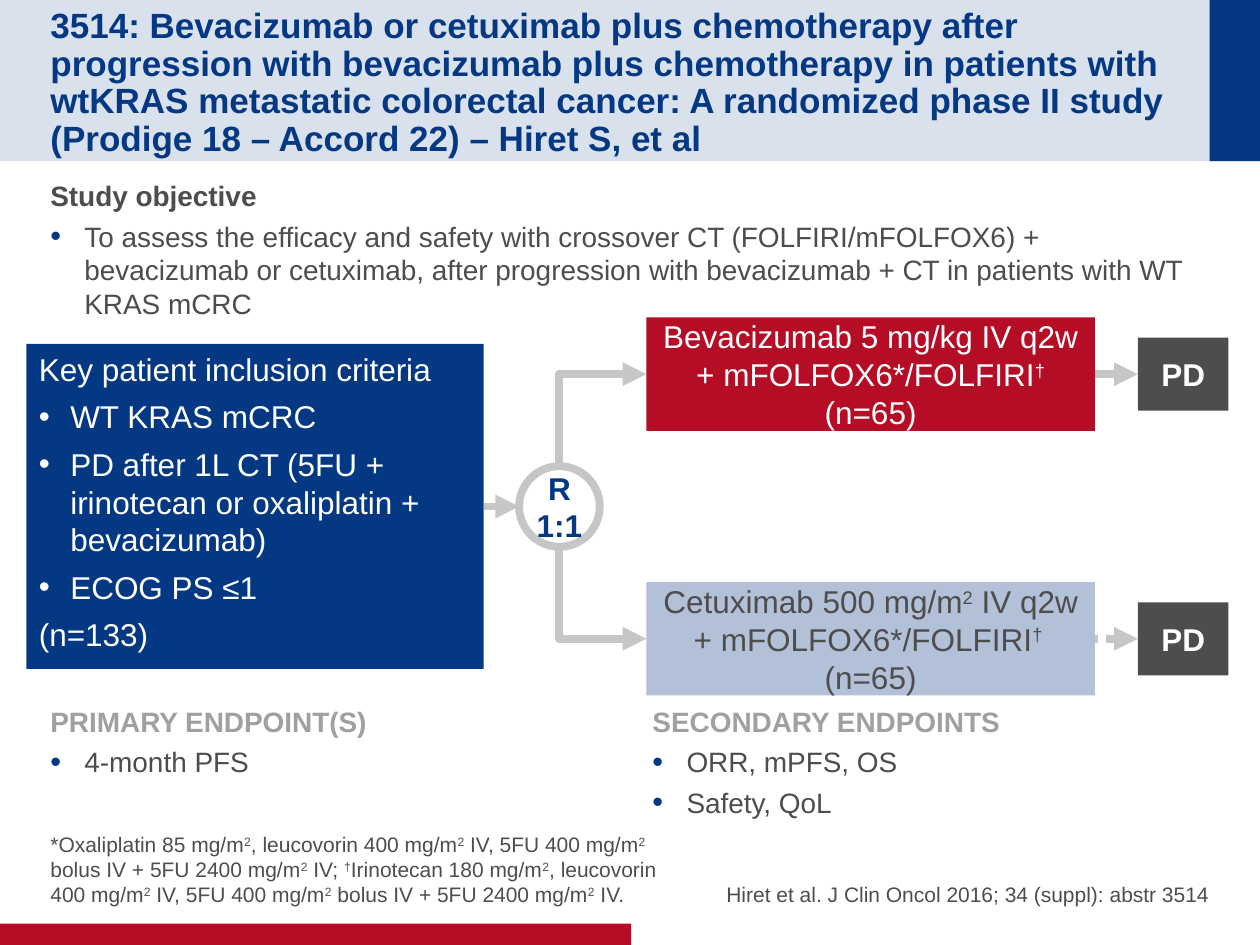
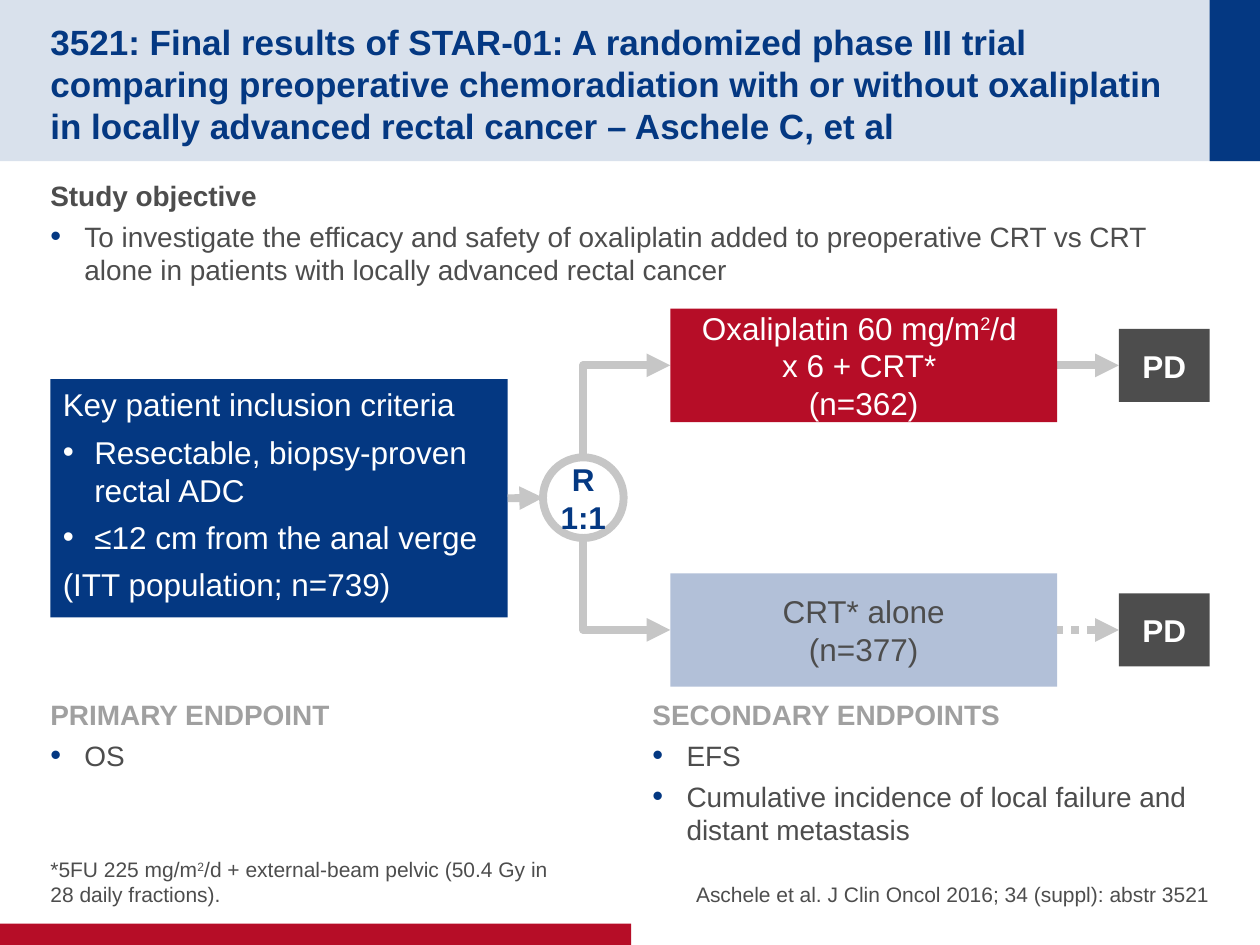
from dataclasses import dataclass
from typing import NamedTuple, Optional

from lxml.etree import SubElement
from pptx import Presentation
from pptx.dml.color import RGBColor
from pptx.enum.dml import MSO_LINE
from pptx.enum.shapes import MSO_CONNECTOR as CXN, MSO_SHAPE as SHAPE
from pptx.enum.text import MSO_ANCHOR as ANCHOR, PP_ALIGN as ALIGN
from pptx.oxml.ns import qn
from pptx.util import Emu, Pt

TOP, LEFT, RIGHT = 0, 1, 3  # connection sites of a rectangle


@dataclass(frozen=True)
class Theme:
    font: str = "Arial"
    navy: str = "043882"
    band: str = "D9E1EC"
    red: str = "B60D27"
    pale: str = "B2C0D8"
    dark: str = "4D4D4D"
    grey: str = "A0A0A0"
    rule: str = "C6C6C6"
    white: str = "FFFFFF"
    title: int = 20
    flow: int = 18
    body: int = 16
    note: int = 12
    rule_width: float = 4.5


T = Theme()


class Box(NamedTuple):
    x: int
    y: int
    w: int
    h: int


class Insets(NamedTuple):
    left: int = 10
    top: int = 5
    right: int = 10
    bottom: int = 5


class Bullet(NamedTuple):
    indent: int
    color: Optional[str] = None
    percent: int = 100


class Para(NamedTuple):
    """A paragraph; text between carets is superscript."""
    text: str
    size: int = T.body
    color: str = T.dark
    bold: bool = False
    align: ALIGN = ALIGN.LEFT
    after: float = 0
    bullet: Optional[Bullet] = None
    spacing: Optional[float] = None


@dataclass(frozen=True)
class Study:
    title: str
    objective: str
    criteria: list[str]
    population: str
    criteria_box: Box
    arm_width: int
    pd_gap: int
    upper_arm: list[str]
    lower_arm: list[str]
    endpoints_y: int
    primary_heading: str
    primary: list[str]
    secondary: list[str]
    footnote: str
    footnote_width: int
    citation: str
    title_spacing: Optional[float] = None


BODY_BULLET = Bullet(27, T.navy, 110)
FLOW_BULLET = Bullet(25)
FLUSH = Insets(0, 0, 0, 0)
BODY_INSETS = Insets(0, 5, 0, 5)
FLOW_INSETS = Insets(10, 0, 10, 0)
BANDS = [(Box(0, 0, 1000, 128), T.band),
         (Box(960, 0, 40, 128), T.navy),
         (Box(0, 733, 501, 17), T.red)]
MARGIN, COLUMN_2, COLUMN_W = 40, 508, 452
CIRCLE, CIRCLE_GAP, ARM_GAP = 64, 28, 37
ARM_H, ARM_OFFSET = 90, 105
PD_W, PD_H, PD_ARROW = 72, 58, 63


def px(n: float) -> Emu:
    """One hundred px make an inch."""
    return Emu(round(n * 9144))


def rgb(color: str) -> RGBColor:
    return RGBColor.from_string(color)


def add_bullet(p, bullet: Bullet) -> None:
    pPr = p._p.get_or_add_pPr()
    pPr.set("marL", str(px(bullet.indent)))
    pPr.set("indent", str(-px(bullet.indent)))
    if bullet.color:
        SubElement(SubElement(pPr, qn("a:buClr")), qn("a:srgbClr"), val=bullet.color)
    SubElement(pPr, qn("a:buSzPct"), val=str(bullet.percent * 1000))
    SubElement(pPr, qn("a:buFont"), typeface=T.font)
    SubElement(pPr, qn("a:buChar"), char="•")


def add_runs(p, para: Para) -> None:
    for i, chunk in enumerate(para.text.split("^")):
        for j, line in enumerate(chunk.split("\n")):
            if j:
                p.add_line_break()
            if not line:
                continue
            r = p.add_run()
            r.text = line
            r.font.name, r.font.size, r.font.bold = T.font, Pt(para.size), para.bold
            r.font.color.rgb = rgb(para.color)
            if i % 2:
                r.font._element.set("baseline", "30000")


def write(s, paras: list[Para], insets: Insets, anchor=ANCHOR.TOP, wrap=True) -> None:
    tf = s.text_frame
    tf.word_wrap, tf.vertical_anchor = wrap, anchor
    tf.margin_left, tf.margin_top, tf.margin_right, tf.margin_bottom = map(px, insets)
    for i, para in enumerate(paras):
        p = tf.add_paragraph() if i else tf.paragraphs[0]
        p.alignment, p.space_after = para.align, Pt(para.after)
        if para.spacing:
            p.line_spacing = para.spacing
        if para.bullet:
            add_bullet(p, para.bullet)
        add_runs(p, para)


def add_text(slide, box: Box, paras: list[Para], insets: Insets, anchor=ANCHOR.TOP) -> None:
    write(slide.shapes.add_textbox(*map(px, box)), paras, insets, anchor)


def add_block(slide, box: Box, fill: Optional[str], kind=SHAPE.RECTANGLE):
    s = slide.shapes.add_shape(kind, *map(px, box))
    s.shadow.inherit = False
    s.line.fill.background()
    if fill:
        s.fill.solid()
        s.fill.fore_color.rgb = rgb(fill)
    else:
        s.fill.background()
    return s


def add_flow_box(slide, box: Box, fill: str, lines: list[str], color: str, bold=False):
    s = add_block(slide, box, fill)
    paras = [Para(t, T.flow, color, bold, ALIGN.CENTER) for t in lines]
    write(s, paras, FLOW_INSETS, ANCHOR.MIDDLE)
    return s


def add_arrow(slide, start, end, kind=CXN.STRAIGHT, tip="a:tailEnd", dotted=False):
    s = slide.shapes.add_connector(kind, *map(px, (*start, *end)))
    s.line.color.rgb, s.line.width = rgb(T.rule), Pt(T.rule_width)
    if dotted:
        s.line.dash_style = MSO_LINE.ROUND_DOT
    SubElement(s.line._get_or_add_ln(), qn(tip), type="triangle")
    SubElement(s._element.spPr, qn("a:effectLst"))
    return s


def add_elbow(slide, arm_side, circle_edge) -> None:
    """Runs from the arm to the circle in one bend, with its tip at the arm."""
    s = add_arrow(slide, arm_side, circle_edge, CXN.ELBOW, "a:headEnd")
    s._element.spPr.find(qn("a:prstGeom")).set("prst", "bentConnector2")


def add_heading_list(slide, box: Box, heading: str, color: str, items: list[str],
                     insets: Insets) -> None:
    paras = [Para(heading, color=color, bold=True, after=4)]
    paras += [Para(t, after=4, bullet=BODY_BULLET) for t in items]
    add_text(slide, box, paras, insets)


def add_criteria(slide, study: Study):
    s = add_block(slide, study.criteria_box, T.navy)
    lines = [("Key patient inclusion criteria", None),
             *((t, FLOW_BULLET) for t in study.criteria), (study.population, None)]
    write(s, [Para(t, T.flow, T.white, after=5.4, bullet=b) for t, b in lines], Insets())
    return s


def add_flow(slide, study: Study) -> None:
    """Criteria, randomisation and the two arms, each leading to PD."""
    box = study.criteria_box
    mid = box.y + box.h // 2
    circle_x = box.x + box.w + CIRCLE_GAP
    circle_mid = circle_x + CIRCLE // 2
    arm_x = circle_x + CIRCLE + ARM_GAP
    pd_x = arm_x + study.arm_width + study.pd_gap

    criteria = add_criteria(slide, study)
    circle = add_block(slide, Box(circle_x, mid - CIRCLE // 2, CIRCLE, CIRCLE), None, SHAPE.OVAL)
    circle.line.color.rgb, circle.line.width = rgb(T.rule), Pt(T.rule_width)
    write(circle, [Para(t, T.flow, T.navy, True, ALIGN.CENTER) for t in ("R", "1:1")],
          Insets(), ANCHOR.MIDDLE, wrap=False)
    arrow = add_arrow(slide, (box.x + box.w, mid), (circle_x, mid))
    arrow.begin_connect(criteria, RIGHT)

    arms = [(-1, study.upper_arm, T.red, T.white, False),
            (1, study.lower_arm, T.pale, T.dark, True)]
    for sign, lines, fill, color, dotted in arms:
        y = mid + sign * ARM_OFFSET
        add_elbow(slide, (arm_x, y), (circle_mid, mid + sign * CIRCLE // 2))
        pd = add_flow_box(slide, Box(pd_x, y - PD_H // 2, PD_W, PD_H), T.dark,
                          ["PD"], T.white, bold=True)
        arrow = add_arrow(slide, (pd_x - PD_ARROW, y), (pd_x, y), dotted=dotted)
        arrow.end_connect(pd, LEFT)
        add_flow_box(slide, Box(arm_x, y - ARM_H // 2, study.arm_width, ARM_H),
                     fill, lines, color)


def add_study(prs, study: Study) -> None:
    slide = prs.slides.add_slide(prs.slide_layouts[6])
    for box, fill in BANDS:
        add_block(slide, box, fill)
    add_text(slide, Box(MARGIN, 20, 901, 88),
             [Para(study.title, T.title, T.navy, True, spacing=study.title_spacing)],
             Insets(0, 5, 0, 0), ANCHOR.MIDDLE)
    add_heading_list(slide, Box(MARGIN, 137, 920, 519), "Study objective", T.dark,
                     [study.objective], BODY_INSETS)
    add_flow(slide, study)
    y = study.endpoints_y
    add_heading_list(slide, Box(MARGIN, y, COLUMN_W, 100), study.primary_heading, T.grey,
                     study.primary, BODY_INSETS)
    add_heading_list(slide, Box(COLUMN_2, y, COLUMN_W, 100), "SECONDARY ENDPOINTS", T.grey,
                     study.secondary, Insets())
    notes = [(MARGIN, study.footnote_width, study.footnote, ALIGN.LEFT),
             (COLUMN_2, COLUMN_W, study.citation, ALIGN.RIGHT)]
    for x, w, text, align in notes:
        add_text(slide, Box(x, 667, w, 53), [Para(text, T.note, align=align, after=4)],
                 FLUSH, ANCHOR.BOTTOM)


STUDIES = [
    Study(
        title="3514: Bevacizumab or cetuximab plus chemotherapy after progression with "
              "bevacizumab plus chemotherapy in patients with wtKRAS metastatic colorectal "
              "cancer: A randomized phase II study (Prodige 18 – Accord 22) – Hiret S, et al",
        title_spacing=0.9,
        objective="To assess the efficacy and safety with crossover CT (FOLFIRI/mFOLFOX6) + "
                  "bevacizumab or cetuximab, after progression with bevacizumab + CT in "
                  "patients with WT KRAS mCRC",
        criteria=["WT KRAS mCRC",
                  "PD after 1L CT (5FU + irinotecan or oxaliplatin + bevacizumab)",
                  "ECOG PS ≤1"],
        population="(n=133)",
        criteria_box=Box(21, 273, 363, 258), arm_width=356, pd_gap=34,
        upper_arm=["Bevacizumab 5 mg/kg IV q2w + mFOLFOX6*/FOLFIRI^†^ (n=65)"],
        lower_arm=["Cetuximab 500 mg/m^2^ IV q2w + mFOLFOX6*/FOLFIRI^† \n^(n=65)"],
        endpoints_y=554, primary_heading="PRIMARY ENDPOINT(S)", primary=["4-month PFS"],
        secondary=["ORR, mPFS, OS", "Safety, QoL"],
        footnote="*Oxaliplatin 85 mg/m^2^, leucovorin 400 mg/m^2^ IV, 5FU 400 mg/m^2^ bolus IV "
                 "+ 5FU 2400 mg/m^2^ IV; ^†^Irinotecan 180 mg/m^2^, leucovorin 400 mg/m^2^ IV, "
                 "5FU 400 mg/m^2^ bolus IV + 5FU 2400 mg/m^2^ IV.",
        footnote_width=491,
        citation="Hiret et al. J Clin Oncol 2016; 34 (suppl): abstr 3514"),
    Study(
        title="3521: Final results of STAR-01: A randomized phase III trial comparing "
              "preoperative chemoradiation with or without oxaliplatin in locally advanced "
              "rectal cancer – Aschele C, et al",
        objective="To investigate the efficacy and safety of oxaliplatin added to preoperative "
                  "CRT vs CRT alone in patients with locally advanced rectal cancer",
        criteria=["Resectable, biopsy-proven rectal ADC", "≤12 cm from the anal verge"],
        population="(ITT population; n=739)",
        criteria_box=Box(40, 301, 363, 189), arm_width=307, pd_gap=49,
        upper_arm=["Oxaliplatin 60 mg/m^2^/d \nx 6 + CRT* ", "(n=362)"],
        lower_arm=["CRT* alone", "(n=377)"],
        endpoints_y=549, primary_heading="PRIMARY ENDPOINT", primary=["OS"],
        secondary=["EFS", "Cumulative incidence of local failure and distant metastasis"],
        footnote="*5FU 225 mg/m^2^/d + external-beam pelvic (50.4 Gy in \n28 daily fractions).",
        footnote_width=452,
        citation="Aschele et al. J Clin Oncol 2016; 34 (suppl): abstr 3521"),
]


def main() -> None:
    prs = Presentation()
    prs.slide_width, prs.slide_height = px(1000), px(750)
    for study in STUDIES:
        add_study(prs, study)
    prs.save("out.pptx")


if __name__ == "__main__":
    main()
